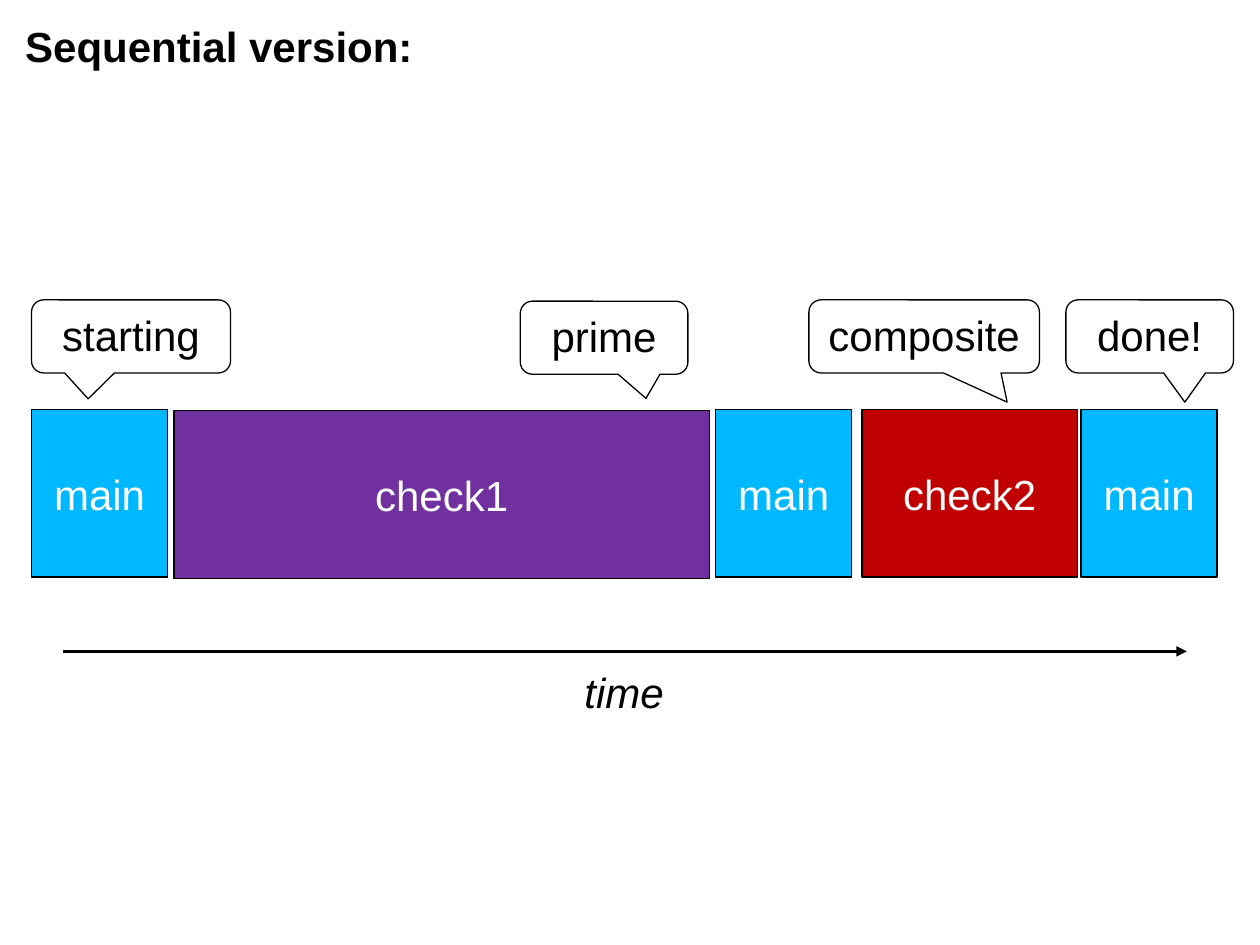
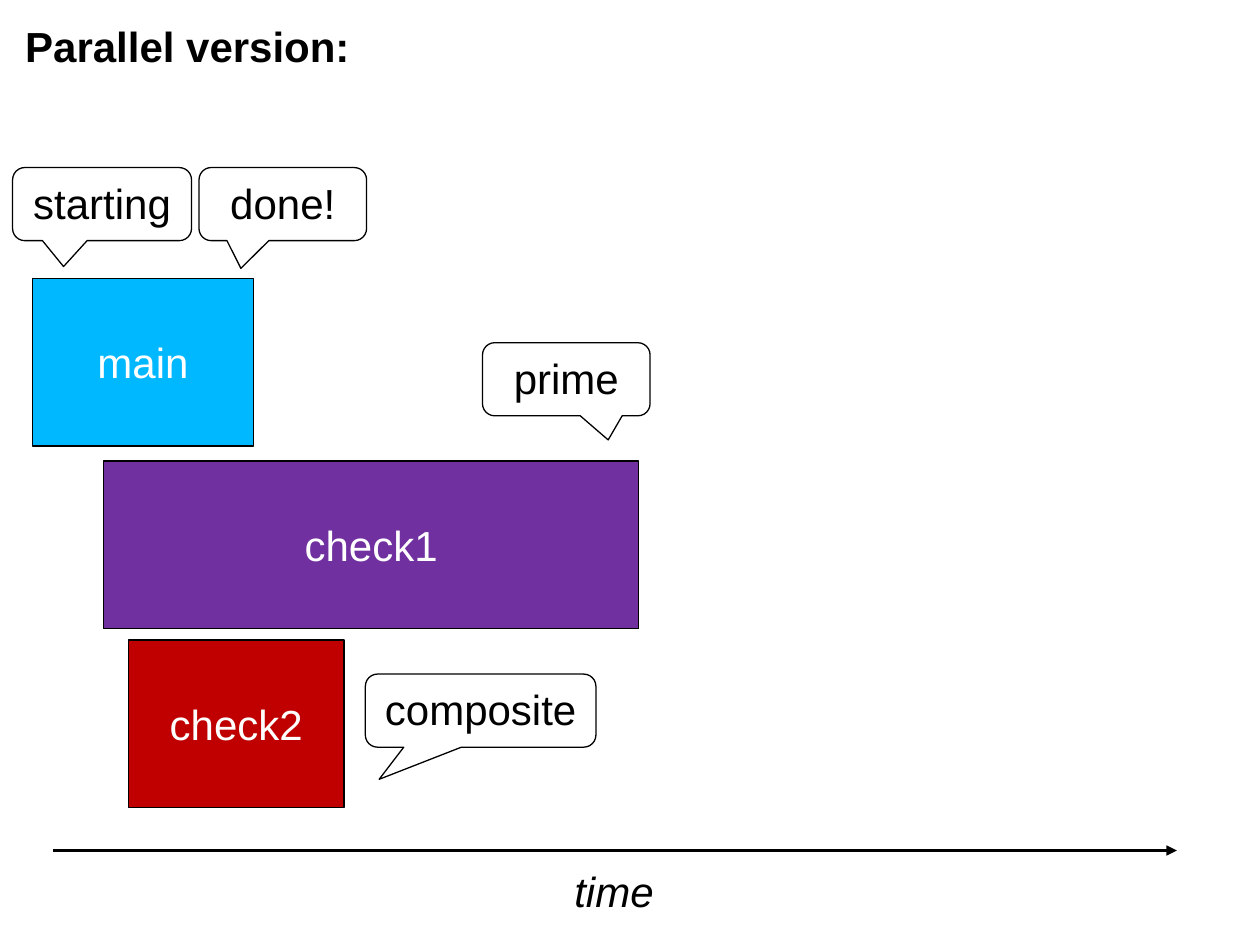
"""Build two slides that compare sequential and parallel prime checks on a time line."""
from lxml.etree import SubElement
from pptx import Presentation
from pptx.dml.color import RGBColor
from pptx.enum.shapes import MSO_CONNECTOR, MSO_SHAPE
from pptx.enum.text import MSO_ANCHOR, MSO_AUTO_SIZE, PP_ALIGN
from pptx.oxml.ns import qn
from pptx.util import Inches, Pt

COLORS = {
    "main": "00B8FF",
    "check1": "7030A0",
    "check2": "C00000",
    "ink": "000000",
    "label": "FFFFFF",
}
FONT = "Arial"
TASK_HEIGHT = 1.33
MAIN_WIDTH = 1.08
CHECK1_WIDTH = 4.25
CHECK2_WIDTH = 1.71
SHORT_CALLOUT = 1.33
LONG_CALLOUT = 1.83
CALLOUT_HEIGHT = 0.58
AXIS_LENGTH = 8.92


def color(name):
    return RGBColor.from_string(COLORS[name])


def set_text(shape, text, color_name="ink", align=PP_ALIGN.CENTER,
             anchor=MSO_ANCHOR.TOP, bold=False, italic=False):
    frame = shape.text_frame
    frame.text = text
    frame.word_wrap = True
    frame.vertical_anchor = anchor
    paragraph = frame.paragraphs[0]
    paragraph.alignment = align
    font = paragraph.runs[0].font
    font.name = FONT
    font.size = Pt(24)
    font.bold = bold
    font.italic = italic
    font.color.rgb = color(color_name)


def add_outlined(shapes, kind, left, top, width, height):
    shape = shapes.add_shape(kind, Inches(left), Inches(top), Inches(width), Inches(height))
    shape.shadow.inherit = False
    shape.line.color.rgb = color("ink")
    shape.line.width = Pt(0.75)
    return shape


def add_task(shapes, name, left, top, width):
    task = add_outlined(shapes, MSO_SHAPE.RECTANGLE, left, top, width, TASK_HEIGHT)
    task.fill.solid()
    task.fill.fore_color.rgb = color(name)
    set_text(task, name, "label", anchor=MSO_ANCHOR.MIDDLE)


def add_callout(shapes, text, left, top, width, tip):
    callout = add_outlined(shapes, MSO_SHAPE.ROUNDED_RECTANGULAR_CALLOUT,
                           left, top, width, CALLOUT_HEIGHT)
    callout.fill.background()
    callout.adjustments[0], callout.adjustments[1] = tip
    set_text(callout, text)


def add_check1(slide, left, top, callout_left, callout_top):
    shapes = slide.shapes.add_group_shape().shapes
    add_task(shapes, "check1", left, top, CHECK1_WIDTH)
    add_callout(shapes, "prime", callout_left, callout_top, SHORT_CALLOUT, (0.25, 0.83))


def add_check2(slide, left, top, callout_left, callout_top, tip):
    shapes = slide.shapes.add_group_shape().shapes
    add_task(shapes, "check2", left, top, CHECK2_WIDTH)
    add_callout(shapes, "composite", callout_left, callout_top, LONG_CALLOUT, tip)


def add_time_axis(slide, left, top):
    axis = slide.shapes.add_connector(MSO_CONNECTOR.STRAIGHT, Inches(left), Inches(top),
                                      Inches(left + AXIS_LENGTH), Inches(top))
    axis.line.color.rgb = color("ink")
    axis.line.width = Pt(1.75)
    SubElement(axis.line._get_or_add_ln(), qn("a:tailEnd"), type="triangle")
    SubElement(axis._element.spPr, qn("a:effectLst"))
    label = slide.shapes.add_textbox(Inches(left + 4.04), Inches(top + 0.07),
                                     Inches(0.84), Inches(0.5))
    set_text(label, "time", align=PP_ALIGN.LEFT, italic=True)


def add_titled_slide(presentation, text):
    slide = presentation.slides.add_slide(presentation.slide_layouts[5])
    title = slide.shapes.title
    title.left, title.top = Inches(0.1), Inches(0.11)
    title.width, title.height = Inches(3.31), Inches(0.51)
    set_text(title, text, align=PP_ALIGN.LEFT, bold=True)
    title.text_frame.auto_size = MSO_AUTO_SIZE.NONE
    return slide


def build_sequential(presentation):
    slide = add_titled_slide(presentation, "Sequential version:")
    task_top, callout_top = 3.25, 2.38
    for left in (0.25, 5.68, 8.58):
        add_task(slide.shapes, "main", left, task_top, MAIN_WIDTH)
    add_callout(slide.shapes, "starting", 0.25, callout_top, 1.58, (-0.215, 0.855))
    add_check2(slide, 6.84, task_top, 6.42, callout_top, (0.36, 0.9))
    add_check1(slide, 1.38, task_top + 0.01, 4.13, callout_top + 0.01)
    add_callout(slide.shapes, "done!", 8.46, callout_top, SHORT_CALLOUT, (0.21, 0.9))
    add_time_axis(slide, 0.5, 5.17)


def build_parallel(presentation):
    slide = add_titled_slide(presentation, "Parallel version:")
    callout_top = 1.33
    add_task(slide.shapes, "main", 0.26, 2.21, 1.75)
    add_callout(slide.shapes, "starting", 0.1, callout_top, 1.42, (-0.215, 0.855))
    add_check2(slide, 1.02, 5.08, 2.9, 5.35, (-0.44, 0.94))
    add_check1(slide, 0.82, 3.66, 3.83, 2.72)
    add_callout(slide.shapes, "done!", 1.58, callout_top, SHORT_CALLOUT, (-0.25, 0.88))
    add_time_axis(slide, 0.42, 6.75)


def main():
    presentation = Presentation()
    presentation.slide_width = Inches(10)
    presentation.slide_height = Inches(7.5)
    build_sequential(presentation)
    build_parallel(presentation)
    presentation.save("out.pptx")


if __name__ == "__main__":
    main()
